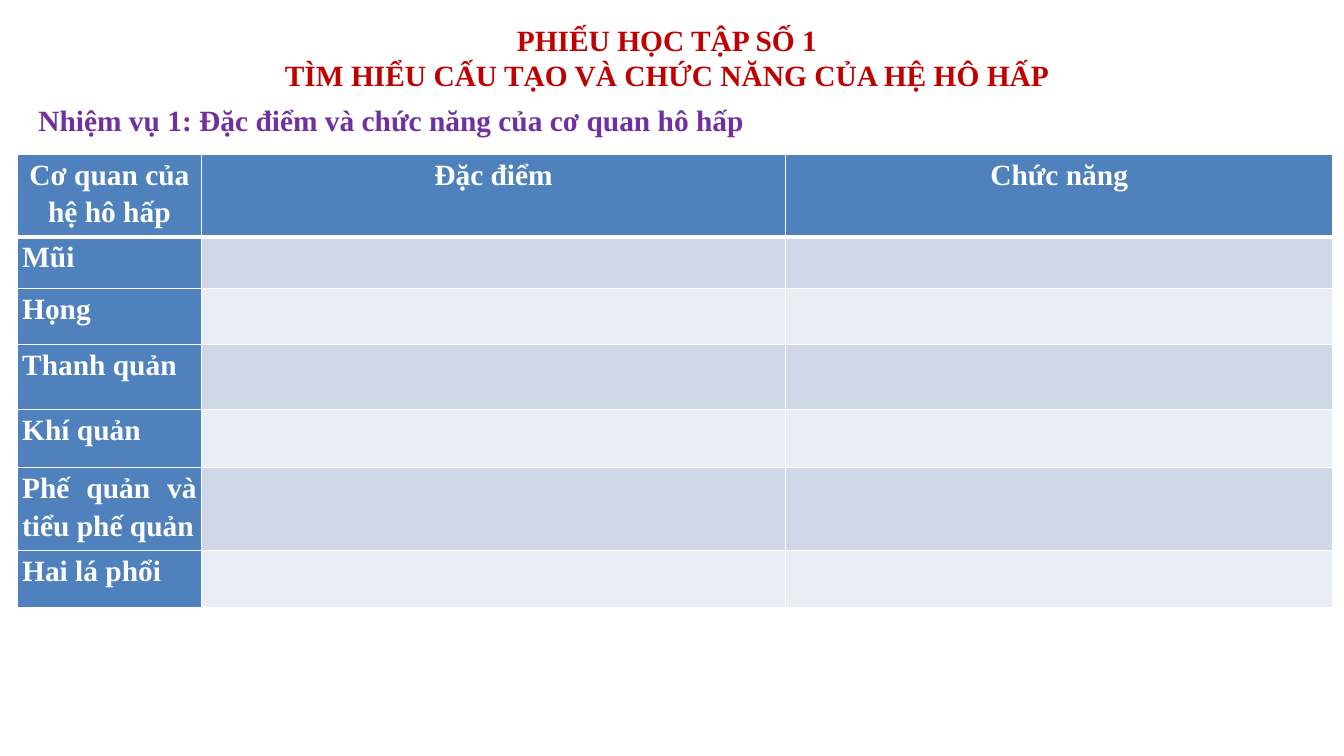
from lxml.etree import SubElement
from pptx import Presentation
from pptx.dml.color import RGBColor
from pptx.enum.text import MSO_ANCHOR as Anchor, MSO_AUTO_SIZE as Fit, PP_ALIGN as Align
from pptx.oxml.ns import qn
from pptx.util import Inches, Pt

BLUE, WHITE, RED, PURPLE = "4F81BD", "FFFFFF", "C00000", "7030A0"
BANDS = ["E9EDF4", "D0D8E8"]
HEADS = ["Cơ quan của hệ hô hấp", "Đặc điểm", "Chức năng"]
ORGANS = ["Mũi", "Họng", "Thanh quản", "Khí quản", "Phế quản và tiểu phế quản", "Hai lá phổi"]
WIDTHS = [1.83, 5.79, 5.43]
HEIGHTS = [0.82, 0.51, 0.56, 0.64, 0.58, 0.82, 0.57]


def paint(fmt, color):
    """Give a fill or a font a solid colour."""
    fmt.rgb = RGBColor.from_string(color)


def write(frame, text, color=WHITE, align=Align.JUSTIFY, space=1.0):
    """Write each line of text as a formatted paragraph."""
    for i, line in enumerate(text.split("\n")):
        para = frame.add_paragraph() if i else frame.paragraphs[0]
        para.alignment, para.line_spacing = align, space
        run = para.add_run()
        run.text = line
        font = run.font
        font.name, font.size, font.bold = "Times New Roman", Pt(21), True
        paint(font.color, color)


def place(shape, box, anchor):
    """Move a text shape into its box and set its frame."""
    shape.left, shape.top, shape.width, shape.height = map(Inches, box)
    frame = shape.text_frame
    frame.word_wrap, frame.auto_size = True, Fit.SHAPE_TO_FIT_TEXT
    frame.vertical_anchor = anchor
    frame.margin_left = frame.margin_right = Inches(0.07)
    frame.margin_top = frame.margin_bottom = Inches(0.03)
    return frame


def add_title(slide, box):
    """Fill the title placeholder with the two heading lines."""
    frame = place(slide.shapes.title, box, Anchor.TOP)
    text = "PHIẾU HỌC TẬP SỐ 1\nTÌM HIỂU CẤU TẠO VÀ CHỨC NĂNG CỦA HỆ HÔ HẤP"
    write(frame, text, color=RED, align=Align.CENTER)


def add_task(slide, box):
    """Add the line that names the task."""
    shape = slide.shapes.add_textbox(*map(Inches, box))
    frame = place(shape, box, Anchor.MIDDLE)
    write(frame, "Nhiệm vụ 1: Đặc điểm và chức năng của cơ quan hô hấp", color=PURPLE)


def edge(cell, **sides):
    """Draw white cell borders, with a width in points for each side."""
    props = cell._tc.get_or_add_tcPr()
    for side, width in sides.items():
        line = SubElement(props, qn("a:ln" + side), w=str(Pt(width)))
        SubElement(SubElement(line, qn("a:solidFill")), qn("a:srgbClr"), val=WHITE)


def add_grid(slide, left, top):
    """Add the worksheet table with its top left corner at the given point."""
    size = map(Inches, (left, top, sum(WIDTHS), sum(HEIGHTS)))
    table = slide.shapes.add_table(len(HEIGHTS), len(WIDTHS), *size).table
    table.first_col = True
    for col, width in zip(table.columns, WIDTHS):
        col.width = Inches(width)
    for r, (row, height) in enumerate(zip(table.rows, HEIGHTS)):
        row.height = Inches(height)
        texts = [ORGANS[r - 1], "", ""] if r else HEADS
        for c, (cell, text) in enumerate(zip(row.cells, texts)):
            edge(cell, L=1, R=1, T=3 if r == 1 else 1, B=1 if r else 3)
            cell.fill.solid()
            paint(cell.fill.fore_color, BANDS[r % 2] if r and c else BLUE)
            if text:
                cell.margin_left = cell.margin_right = Inches(0.05)
                cell.margin_top = cell.margin_bottom = 0
                align = Align.JUSTIFY if r else Align.CENTER
                write(cell.text_frame, text, align=align, space=1.15)


def main():
    """Build the slide and save it."""
    deck = Presentation()
    deck.slide_width, deck.slide_height = Inches(13.33), Inches(7.5)
    slide = deck.slides.add_slide(deck.slide_layouts[5])
    add_title(slide, (0.56, 0.19, 12.11, 0.79))
    add_task(slide, (0.31, 0.97, 12.61, 0.43))
    add_grid(slide, 0.17, 1.53)
    deck.save("out.pptx")


if __name__ == "__main__":
    main()
